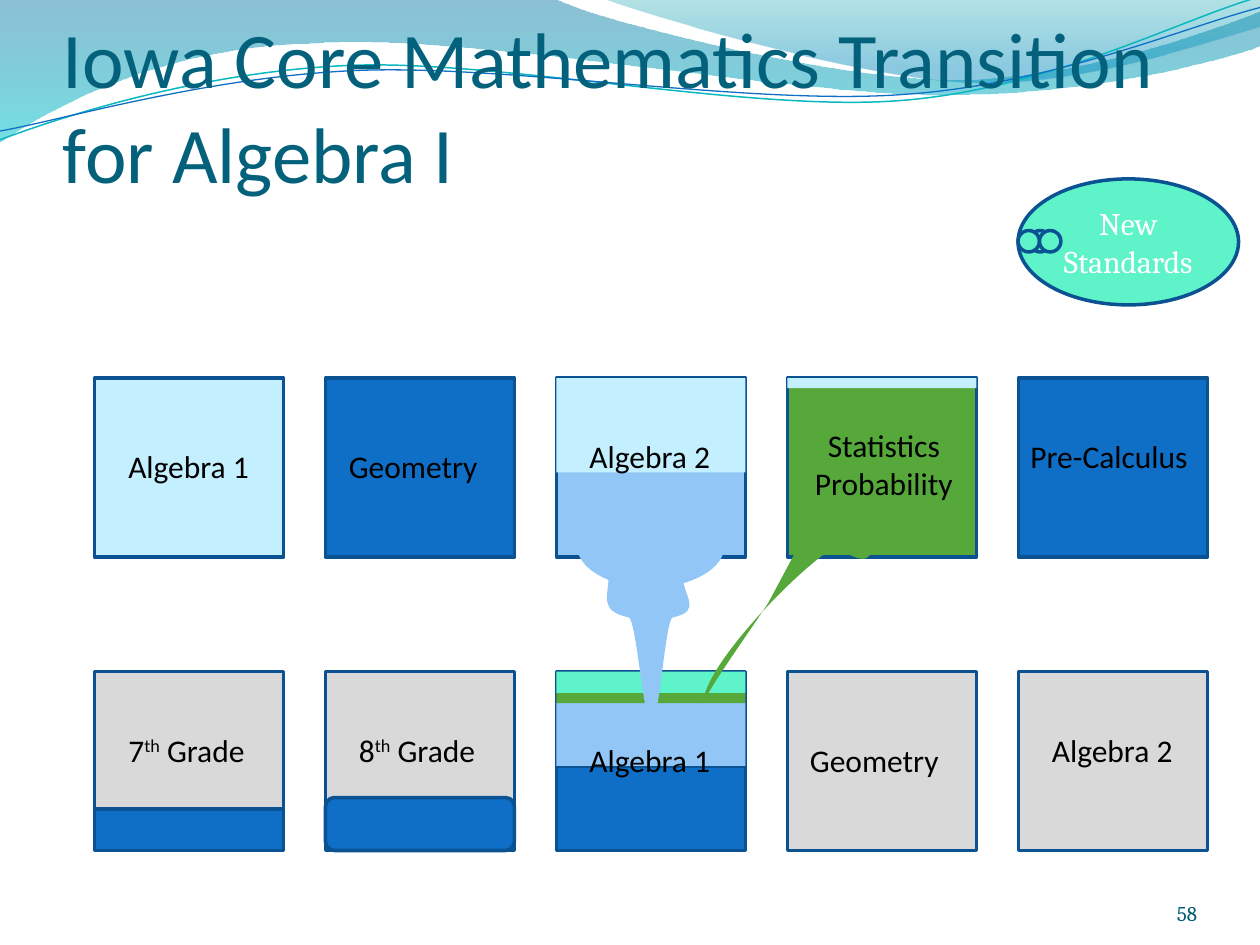
from dataclasses import dataclass

from lxml import etree
from pptx import Presentation, util as u
from pptx.dml.color import RGBColor
from pptx.enum import shapes, text
from pptx.oxml.ns import qn


@dataclass(frozen=True)
class Theme:
    navy: str = "0B5292"
    blue: str = "0F6FC6"
    sky: str = "91C6F7"
    ice: str = "C4EFFF"
    green: str = "55A839"
    mint: str = "5FF3CA"
    gray: str = "D9D9D9"
    teal: str = "0AB8BF"
    title: str = "04617B"
    number: str = "045D75"
    black: str = "000000"
    white: str = "FFFFFF"
    sans: str = "Calibri"
    serif: str = "Cambria"
    title_size: int = 45
    label_size: int = 18
    number_size: int = 12


THEME = Theme()
RECT = shapes.MSO_SHAPE.RECTANGLE
OVAL = shapes.MSO_SHAPE.OVAL
ROUNDED = shapes.MSO_SHAPE.ROUNDED_RECTANGLE

prs = Presentation()
prs.slide_width, prs.slide_height = u.Inches(10), u.Inches(7.5)
slide = prs.slides.add_slide(prs.slide_layouts[6])


def add_part(outline, place, fill=None, line=None, width=2):
    """Add a preset at (left, top, width, height), or, when outline is None,
    a path: a start point, then line (x, y) and curve (x1, y1, x2, y2, x, y) steps."""
    if outline is not None:
        part = slide.shapes.add_shape(outline, *map(u.Inches, place))
    else:
        points = [tuple(map(u.Inches, step[-2:])) for step in place]
        builder = slide.shapes.build_freeform(*points[0], scale=1.0)
        builder.add_line_segments(points[1:], close=fill is not None)
        part = builder.convert_to_shape()
        # Turn the straight segments of curve steps into cubic Béziers
        segments = list(part._element.iter(qn("a:lnTo")))
        for segment, step in zip(segments, place[1:]):
            if len(step) == 6:
                segment.tag = qn("a:cubicBezTo")
                for i, (x, y) in enumerate((step[:2], step[2:4])):
                    control = etree.Element(qn("a:pt"), x=str(u.Inches(x) - part.left),
                                            y=str(u.Inches(y) - part.top))
                    segment.insert(i, control)
    part.shadow.inherit = False
    if fill:
        part.fill.solid()
        part.fill.fore_color.rgb = RGBColor.from_string(fill)
    else:
        part.fill.background()
    if line:
        part.line.color.rgb = RGBColor.from_string(line)
        part.line.width = u.Pt(width)
    else:
        part.line.fill.background()
    return part


def style_text(frame, size, font, color, align=None):
    frame.word_wrap = True
    for paragraph in frame.paragraphs:
        paragraph.alignment = align
        for run in paragraph.runs:
            run.font.size = u.Pt(size)
            run.font.name = font
            run.font.color.rgb = RGBColor.from_string(color)


# Header waves: (path, ((colour, position, opacity), ...))
wave_bands = [
    ([(0, 0), (4.4, -0.01), (4.76, 0.17, 6.64, 0.63, 7.58, 0.63),
      (8.53, 0.63, 9.58, 0.26, 10, 0.09), (10.01, 0.36),
      (9.83, 0.44, 8.7, 0.76, 7.46, 0.75), (6.22, 0.75, 3.82, 0.28, 2.57, 0.34),
      (1.29, 0.36, 0.46, 0.83, -0.01, 1.13)],
     (("0074A1", 0, 45), ("00C6CF", 1, 55))),
    ([(4.79, -0.01), (5.09, 0.11, 6.82, 0.62, 7.69, 0.65),
      (8.56, 0.69, 9.61, 0.32, 10, 0.21), (10, 0)],
     (("00A1A9", 0, 30), ("008BBF", 0.8, 45))),
]
for path, blend in wave_bands:
    band = add_part(None, path, THEME.teal)
    band.fill.gradient()
    band.fill.gradient_angle = 270
    for stop, (color, position, _) in zip(band.fill.gradient_stops, blend):
        stop.color.rgb = RGBColor.from_string(color)
        stop.position = position
    for color_node, (_, _, opacity) in zip(band._element.iter(qn("a:srgbClr")), blend):
        etree.SubElement(color_node, qn("a:alpha"), val=str(opacity * 1000))

add_part(None, [(0, 1.11), (0.48, 0.93, 1.58, 0.57, 2.77, 0.52),
                (3.95, 0.47, 5.93, 0.89, 7.13, 0.8),
                (8.33, 0.71, 9.38, 0.15, 9.98, -0.02)], line=THEME.teal, width=0.85)
add_part(None, [(0, 1.04), (0.47, 0.96, 1.64, 0.61, 2.83, 0.56),
                (4.03, 0.51, 5.97, 0.84, 7.17, 0.75),
                (8.36, 0.67, 9.41, 0.21, 10, 0.06)], line=THEME.blue, width=0.75)

# Course boxes: five columns, current courses above the new sequence
columns = [0.75 + i * 11 / 6 for i in range(5)]
course_rows = [
    (3, [THEME.ice, THEME.blue, THEME.sky, THEME.green, THEME.blue]),
    (5.33, [THEME.gray] * 5),
]
for top, fills in course_rows:
    for left, fill in zip(columns, fills):
        add_part(RECT, (left, top, 1.5, 1.42), fill, THEME.navy)

# Bands of moved content: (column, top, height, fill, line, outline)
content_bands = [
    (0, 6.42, 0.33, THEME.blue, THEME.navy, RECT),
    (1, 6.33, 0.42, THEME.blue, THEME.navy, ROUNDED),
    (2, 6.08, 0.67, THEME.blue, THEME.navy, RECT),
    (2, 3, 0.75, THEME.ice, None, RECT),
    (2, 5.58, 0.5, THEME.sky, None, RECT),
    (3, 3, 0.08, THEME.ice, None, RECT),
    (2, 5.5, 0.08, THEME.green, None, RECT),
    (2, 5.33, 0.17, THEME.mint, None, RECT),
]
for column, top, height, fill, line, outline in content_bands:
    add_part(outline, (columns[column], top, 1.5, height), fill, line)

# Algebra 2 content pouring into Algebra 1
add_part(OVAL, (4.5, 3.83, 1.33, 0.42), THEME.sky)
add_part(None, [(4.58, 4.33), (4.58, 4.19, 4.75, 4.06, 4.99, 4.02),
                (5.05, 4.01, 5.11, 4, 5.17, 4), (5.23, 4, 5.28, 4.01, 5.34, 4.02),
                (5.58, 4.06, 5.75, 4.19, 5.75, 4.33), (5.75, 4.48, 5.58, 4.6, 5.34, 4.65),
                (5.28, 4.66, 5.23, 5.25, 5.17, 5.25), (5.11, 5.25, 5.05, 4.66, 4.99, 4.65),
                (4.75, 4.6, 4.58, 4.48, 4.58, 4.33)], THEME.sky)
add_part(None, [(4.83, 4.58), (4.83, 4.44, 4.75, 4.31, 4.99, 4.27),
                (5.05, 4.26, 5.11, 4.25, 5.17, 4.25), (5.23, 4.25, 5.28, 4.26, 5.34, 4.27),
                (5.58, 4.31, 5.42, 4.44, 5.42, 4.58), (5.42, 4.73, 5.58, 4.85, 5.34, 4.9),
                (5.28, 4.91, 5.23, 5.75, 5.17, 5.75), (5.11, 5.75, 5.05, 4.91, 4.99, 4.9),
                (4.75, 4.85, 4.83, 4.73, 4.83, 4.58)], THEME.sky)

# Statistics content pouring into Algebra 1
add_part(None, [(6.92, 4.17), (6.92, 4.23, 6.95, 4.34, 6.9, 4.41),
                (6.84, 4.5, 6.63, 4.32, 6.54, 4.32), (6.1, 4.78), (6.41, 4.2),
                (6.42, 4.1, 6.41, 3.94, 6.46, 3.87), (6.52, 3.78, 6.64, 3.85, 6.71, 3.88),
                (6.78, 3.92, 6.83, 3.96, 6.88, 4.06), (6.92, 4.14, 6.92, 4.11, 6.92, 4.17)],
         THEME.green)
add_part(None, [(6.75, 3.92), (6.75, 3.97, 6.76, 4.11, 6.75, 4.17),
                (6.72, 4.33, 6.75, 4.33, 6.67, 4.33), (6.53, 4.33, 5.6, 5.23, 5.58, 5.58),
                (5.72, 5.28, 6.5, 4.31, 6.5, 4), (6.5, 3.93, 6.57, 3.89, 6.58, 3.83),
                (6.62, 3.67, 6.6, 3.58, 6.62, 3.58), (6.65, 3.58, 6.72, 3.67, 6.75, 3.83),
                (6.76, 3.89, 6.75, 3.86, 6.75, 3.92)], THEME.green)

# Course names
course_names = [
    ("Algebra 1", 0.92, 3.5, 1.2), ("Geometry", 2.67, 3.5, 1.33),
    ("Algebra 2", 4.58, 3.42, 1.2), ("Statistics\nProbability", 6.33, 3.33, 1.37),
    ("Pre-Calculus", 8.08, 3.42, 1.5), ("7th Grade", 0.92, 5.75, 1.2),
    ("8th Grade", 2.75, 5.75, 1.2), ("Algebra 1", 4.58, 5.83, 1.2),
    ("Geometry", 6.33, 5.83, 1.33), ("Algebra 2", 8.25, 5.75, 1.2),
]
for name, left, top, width in course_names:
    height = 0.71 if "\n" in name else 0.4
    course = slide.shapes.add_textbox(*map(u.Inches, (left, top, width, height))).text_frame
    course.auto_size = text.MSO_AUTO_SIZE.SHAPE_TO_FIT_TEXT
    if name.endswith("Grade"):
        for piece in (name[0], "th", " Grade"):
            run = course.paragraphs[0].add_run()
            run.text = piece
            if piece == "th":
                run._r.get_or_add_rPr().set("baseline", "30000")
    else:
        course.text = name
    style_text(course, THEME.label_size, THEME.sans, THEME.black,
               text.PP_ALIGN.CENTER if "\n" in name else None)

# New standards and its three drops
standards = add_part(OVAL, (8.08, 1.42, 1.75, 1), THEME.mint, THEME.navy)
standards.text_frame.text = "New Standards"
standards.text_frame.vertical_anchor = text.MSO_ANCHOR.MIDDLE
style_text(standards.text_frame, THEME.label_size, THEME.serif, THEME.white,
           text.PP_ALIGN.CENTER)
for left in (8.17, 8.08, 8.25):
    add_part(OVAL, (left, 1.83, 0.17, 0.17), THEME.mint, THEME.navy)

# Title and slide number
for words, place, inset_top, style in [
    ("Iowa Core Mathematics Transition for Algebra I", (0.5, 0.33, 9, 1.25), 0.05,
     (THEME.title_size, THEME.sans, THEME.title)),
    ("58", (8.67, 6.95, 0.83, 0.4), 0,
     (THEME.number_size, THEME.serif, THEME.number, text.PP_ALIGN.RIGHT)),
]:
    frame = slide.shapes.add_textbox(*map(u.Inches, place)).text_frame
    frame.text = words
    frame.vertical_anchor = text.MSO_ANCHOR.BOTTOM
    frame.margin_left = frame.margin_right = frame.margin_bottom = 0
    frame.margin_top = u.Inches(inset_top)
    style_text(frame, *style)

prs.save("out.pptx")
